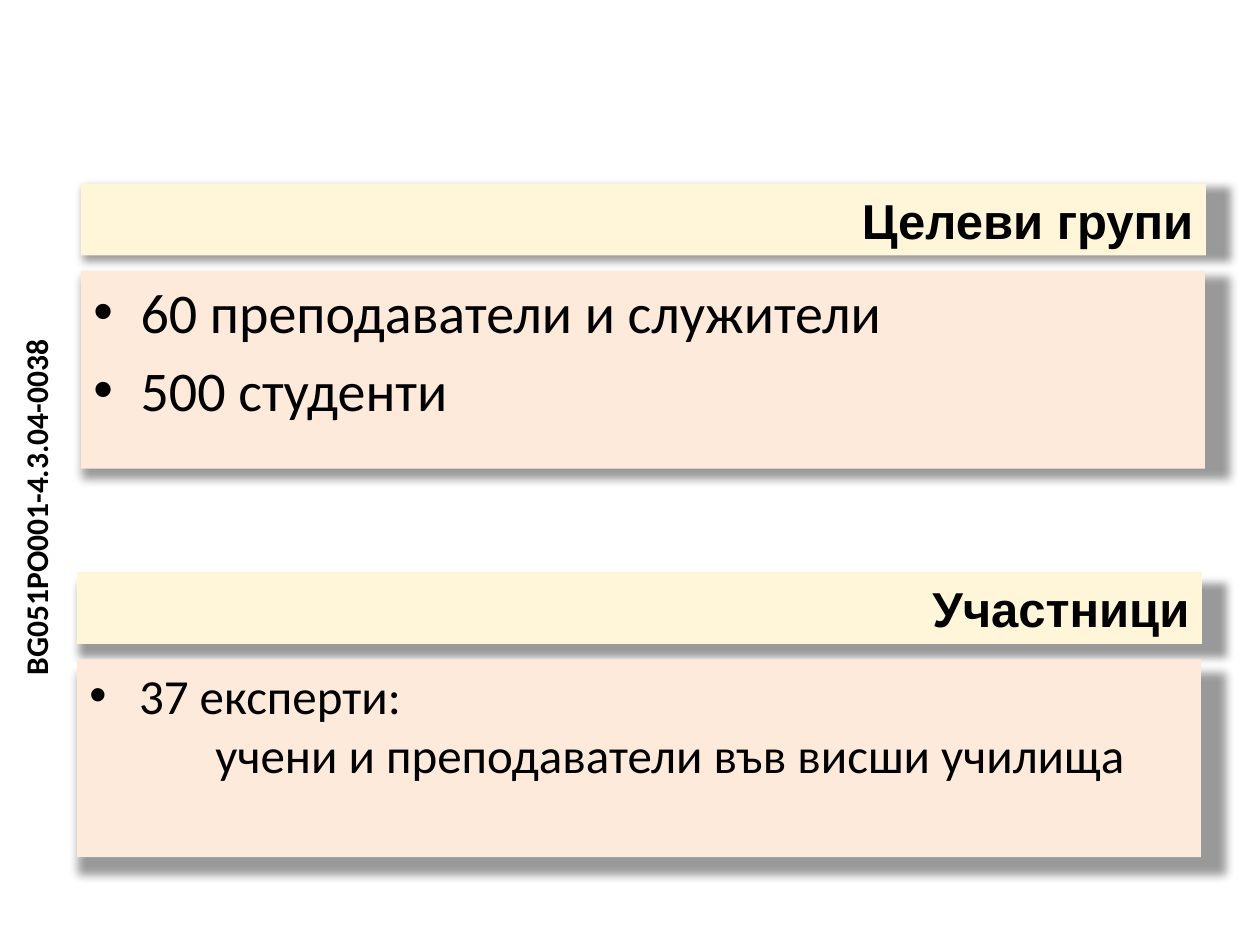
import pptx
import pptx.dml.color
import pptx.enum.text
import pptx.oxml
import pptx.util
from pptx.util import Cm

MIDDLE = pptx.enum.text.MSO_ANCHOR.MIDDLE
TOP = pptx.enum.text.MSO_ANCHOR.TOP
LEFT = pptx.enum.text.PP_ALIGN.LEFT
RIGHT = pptx.enum.text.PP_ALIGN.RIGHT
NS = 'xmlns:a="http://schemas.openxmlformats.org/drawingml/2006/main"'


def color(value):
    return pptx.dml.color.RGBColor.from_string(value)


def write(paragraph, text, font_name, size, bold):
    run = paragraph.add_run()
    run.text = text
    font_format = {"name": font_name, "size": pptx.util.Pt(size), "bold": bold}
    for attribute, value in font_format.items():
        setattr(run.font, attribute, value)
    run.font.color.rgb = color("000000")


deck = pptx.Presentation()
deck.slide_width, deck.slide_height = Cm(25.4), Cm(19.05)
slide = deck.slides.add_slide(deck.slide_layouts[4])
holders = {holder.placeholder_format.idx: holder for holder in slide.placeholders}

# Per section: heading and list placeholders, position, list style, texts.
# Each list item is its text, left indent in cm and whether it has a bullet.
sections = [
    {"heading": 0, "list": 2, "left": 1.63, "top": 3.7, "size": 32,
     "space": 6.4, "shadow_from": "tl", "title": "Целеви групи",
     "items": [("60 преподаватели и служители", 0.95, True),
               ("500 студенти", 0.95, True)]},
    {"heading": 3, "list": 4, "left": 1.55, "top": 11.53, "size": 28,
     "space": 0, "shadow_from": "ctr", "title": "Участници",
     "items": [("37 експерти:", 1, True),
               ("учени и преподаватели във висши училища", 2.54, False)]},
]

for section in sections:
    heading, points = holders.pop(section["heading"]), holders.pop(section["list"])
    panels = [
        (heading, 0, 22.68, 1.45, "FFF5D9", MIDDLE, "ctr"),
        (points, 1.76, 22.66, 3.99, "FDEADA", TOP, section["shadow_from"]),
    ]
    for panel, offset, width, height, fill, anchor, shadow_from in panels:
        place = {"left": Cm(section["left"]), "top": Cm(section["top"] + offset),
                 "width": Cm(width), "height": Cm(height)}
        for attribute, value in place.items():
            setattr(panel, attribute, value)
        panel.fill.solid()
        panel.fill.fore_color.rgb = color(fill)
        panel.text_frame.auto_size = pptx.enum.text.MSO_AUTO_SIZE.NONE
        panel.text_frame.vertical_anchor = anchor
        panel._element.spPr.append(pptx.oxml.parse_xml(
            f'<a:effectLst {NS}><a:outerShdw blurRad="63500" sx="102000" '
            f'sy="102000" algn="{shadow_from}" rotWithShape="0">'
            '<a:srgbClr val="000000"><a:alpha val="40000"/></a:srgbClr>'
            '</a:outerShdw></a:effectLst>'))

    title = heading.text_frame.paragraphs[0]
    title.alignment = RIGHT
    title.space_before = pptx.util.Pt(0)
    write(title, section["title"], "Arial", 28, True)

    for number, (text, indent, bulleted) in enumerate(section["items"]):
        frame = points.text_frame
        item = frame.add_paragraph() if number else frame.paragraphs[0]
        item.alignment = LEFT
        item.space_before = pptx.util.Pt(section["space"])
        properties = item._p.get_or_add_pPr()
        properties.set("marL", str(Cm(indent)))
        properties.set("indent", str(-Cm(indent) if bulleted else 0))
        bullet = '<a:buChar {} char="•"/>' if bulleted else "<a:buNone {}/>"
        properties.append(pptx.oxml.parse_xml(bullet.format(NS)))
        write(item, text, "Calibri", section["size"], False)

for unused in holders.values():
    unused._element.getparent().remove(unused._element)

project_code = slide.shapes.add_textbox(Cm(-2.95), Cm(9.68), Cm(7.34), Cm(1.02))
project_code.rotation = 270
project_code.text_frame.word_wrap = False
write(project_code.text_frame.paragraphs[0], "BG051PO001-4.3.04-0038",
      "Calibri", 18, True)

deck.save("out.pptx")
